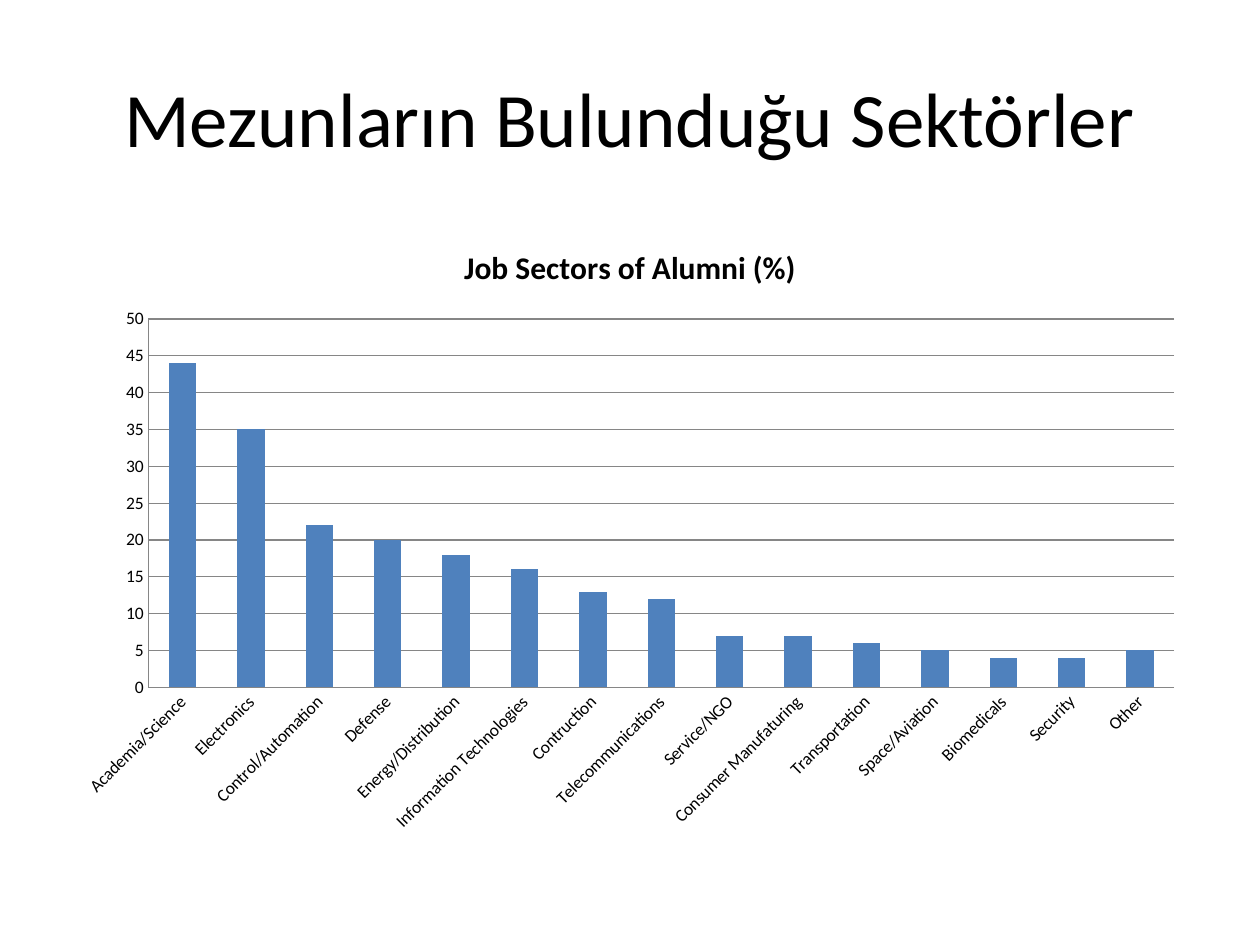
from dataclasses import dataclass

from pptx import Presentation
from pptx.chart import data as cd
from pptx.dml import color
from pptx.enum import chart as ce, text
from pptx.util import Inches, Pt


@dataclass(frozen=True)
class Theme:
    face: str = "Calibri"
    ink: str = "000000"
    bar: str = "4F81BD"
    rule: str = "868686"
    head: int = 44
    sub: int = 18
    body: int = 10


THEME = Theme()
WIDE, HIGH = Inches(10), Inches(7.5)

SHARES = {
    "Academia/Science": 44,
    "Electronics": 35,
    "Control/Automation": 22,
    "Defense": 20,
    "Energy/Distribution": 18,
    "Information Technologies": 16,
    "Contruction": 13,
    "Telecommunications": 12,
    "Service/NGO": 7,
    "Consumer Manufaturing": 7,
    "Transportation": 6,
    "Space/Aviation": 5,
    "Biomedicals": 4,
    "Security": 4,
    "Other": 5,
}


def box(x, y, w, h):
    return int(WIDE * x), int(HIGH * y), int(WIDE * w), int(HIGH * h)


def style(font, size, bold=False):
    font.name = THEME.face
    font.size = Pt(size)
    font.bold = bold
    font.color.rgb = color.RGBColor.from_string(THEME.ink)


def stroke(line):
    line.color.rgb = color.RGBColor.from_string(THEME.rule)
    line.width = Pt(0.75)


def add_title(slide, words, area):
    shape = slide.shapes.title
    shape.left, shape.top, shape.width, shape.height = area
    frame = shape.text_frame
    frame.text = words
    frame.vertical_anchor = text.MSO_ANCHOR.MIDDLE
    para = frame.paragraphs[0]
    para.alignment = text.PP_ALIGN.CENTER
    style(para.font, THEME.head)


def set_axis(axis):
    axis.major_tick_mark = axis.minor_tick_mark = ce.XL_TICK_MARK.NONE
    style(axis.tick_labels.font, THEME.body)
    stroke(axis.format.line)


def add_bars(slide, name, shares, area):
    data = cd.CategoryChartData()
    data.categories = list(shares)
    data.add_series("Series 1", list(shares.values()))
    kind = ce.XL_CHART_TYPE.COLUMN_CLUSTERED
    chart = slide.shapes.add_chart(kind, *area, data).chart
    style(chart.font, THEME.body)
    chart.has_legend = False

    chart.has_title = True
    chart.chart_title.include_in_layout = False
    frame = chart.chart_title.text_frame
    frame.text = name
    style(frame.paragraphs[0].font, THEME.sub, bold=True)

    cats, vals = chart.category_axis, chart.value_axis
    for axis in (cats, vals):
        set_axis(axis)
    cats._element.txPr.bodyPr.set("rot", "-2700000")
    vals.minimum_scale, vals.maximum_scale, vals.major_unit = 0, 50, 5
    vals.has_major_gridlines = True
    stroke(vals.major_gridlines.format.line)

    plot = chart.plots[0]
    plot.gap_width = 150
    plot.vary_by_categories = False
    fill = plot.series[0].format.fill
    fill.solid()
    fill.fore_color.rgb = color.RGBColor.from_string(THEME.bar)


def main():
    deck = Presentation()
    deck.slide_width, deck.slide_height = WIDE, HIGH
    slide = deck.slides.add_slide(deck.slide_layouts[5])
    add_title(slide, "Mezunların Bulunduğu Sektörler", box(0.05, 0.04, 0.9, 1 / 6))
    add_bars(slide, "Job Sectors of Alumni (%)", SHARES, box(0.05, 7 / 30, 0.9, 0.66))
    deck.save("out.pptx")


if __name__ == "__main__":
    main()
